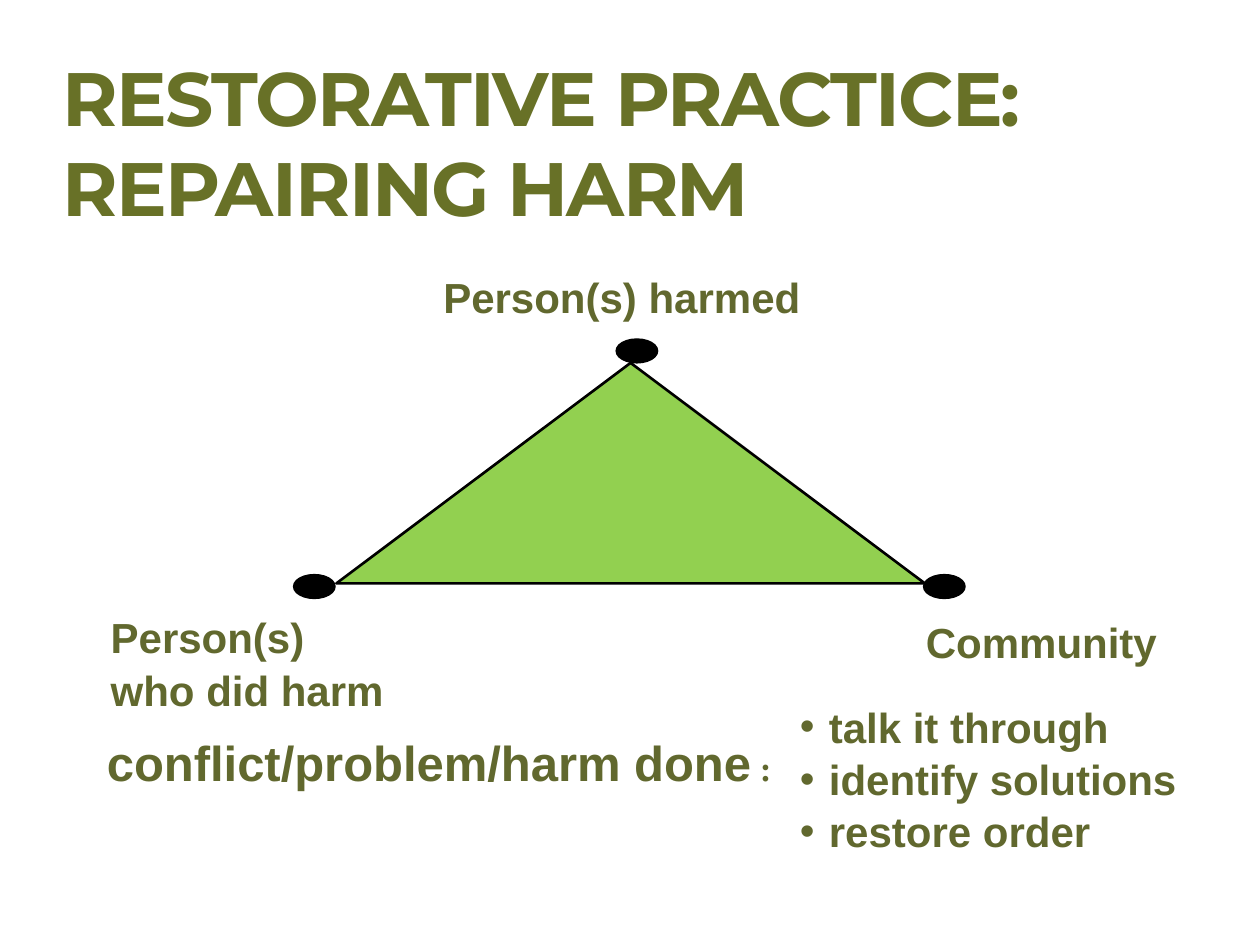
from dataclasses import dataclass

from pptx import Presentation
from pptx import util as u
from pptx.dml.color import RGBColor
from pptx.enum import shapes, text
from pptx.oxml.ns import qn
from lxml import etree


@dataclass(frozen=True)
class Theme:
    title: str = "687127"
    body: str = "61682E"
    fill: str = "92D050"
    dark: str = "000000"
    head: str = "Montserrat"
    sans: str = "Arial"
    serif: str = "Times New Roman"
    big: float = 43.2
    mid: float = 28
    base: float = 24
    small: float = 20


class Deck:
    """Holds the theme and the current slide."""

    def __init__(self, theme, slide):
        self.theme = theme
        self.slide = slide

    def shape(self, kind, box, fill, width):
        item = self.slide.shapes.add_shape(kind, *map(u.Inches, box))
        item.shadow.inherit = False
        item.fill.solid()
        item.fill.fore_color.rgb = RGBColor.from_string(fill)
        item.line.color.rgb = RGBColor.from_string(self.theme.dark)
        item.line.width = u.Pt(width)

    def frame(self, box, wrap, **form):
        frame = self.slide.shapes.add_textbox(*map(u.Inches, box)).text_frame
        form = {"word_wrap": wrap, **form}
        for name, value in form.items():
            setattr(frame, name, value)
        return frame

    def run(self, para, words, size, face, color):
        run = para.add_run()
        run.text = words
        form = {"size": u.Pt(size), "name": face, "bold": True}
        for name, value in form.items():
            setattr(run.font, name, value)
        run.font.color.rgb = RGBColor.from_string(color)
        return run

    def title(self, words, box):
        look = self.theme
        frame = self.frame(box, True, margin_left=0, margin_top=0,
                           margin_right=u.Inches(0.1), margin_bottom=0,
                           vertical_anchor=text.MSO_ANCHOR.MIDDLE)
        run = self.run(frame.paragraphs[0], words, look.big, look.head, look.title)
        run.font._element.set("spc", "-100")

    def label(self, lines, box, size=None, wrap=False, bullet=False):
        look = self.theme
        frame = self.frame(box, wrap, auto_size=text.MSO_AUTO_SIZE.SHAPE_TO_FIT_TEXT)
        for i, words in enumerate(lines):
            para = frame.add_paragraph() if i else frame.paragraphs[0]
            para.line_spacing = 1.04
            self.run(para, words, size or look.base, look.sans, look.body)
            if bullet:
                self.bullet(para)
        return frame

    def bullet(self, para):
        props = para._p.get_or_add_pPr()
        indent = u.Inches(0.23)
        props.set("marL", str(indent))
        props.set("indent", str(-indent))
        etree.SubElement(props, qn("a:buFont")).set("typeface", self.theme.sans)
        etree.SubElement(props, qn("a:buChar")).set("char", "•")


def main():
    show = Presentation()
    show.slide_width, show.slide_height = u.Inches(10), u.Inches(7.5)
    look = Theme()
    deck = Deck(look, show.slides.add_slide(show.slide_layouts[6]))

    # Title
    deck.title("RESTORATIVE PRACTICE: REPAIRING HARM", (0.5, 0.58, 9, 1.08))

    # Triangle with a dot at each corner
    kind = shapes.MSO_SHAPE
    deck.shape(kind.ISOSCELES_TRIANGLE, (2.67, 2.88, 4.67, 1.75), look.fill, 1.5)
    for left, top in ((4.89, 2.69), (7.33, 4.56), (2.33, 4.56)):
        deck.shape(kind.OVAL, (left, top, 0.33, 0.19), look.dark, 0.75)

    # Corner labels
    deck.label(["Person(s) harmed"], (3.42, 2.09, 3.04, 0.5))
    deck.label(["Person(s)", "who did harm"], (0.78, 4.79, 2.39, 0.91))
    deck.label(["Community"], (7.25, 4.83, 2.03, 0.5))

    # Problem and the steps that answer it
    cause = deck.label(["conflict/problem/harm done"], (0.75, 5.75, 5.63, 0.57), look.mid)
    deck.run(cause.paragraphs[0], " :", look.small, look.serif, look.body)
    deck.label(["talk it through", "identify solutions", "restore order"],
               (6.25, 5.5, 3.42, 1.72), wrap=True, bullet=True)

    show.save("out.pptx")


if __name__ == "__main__":
    main()
